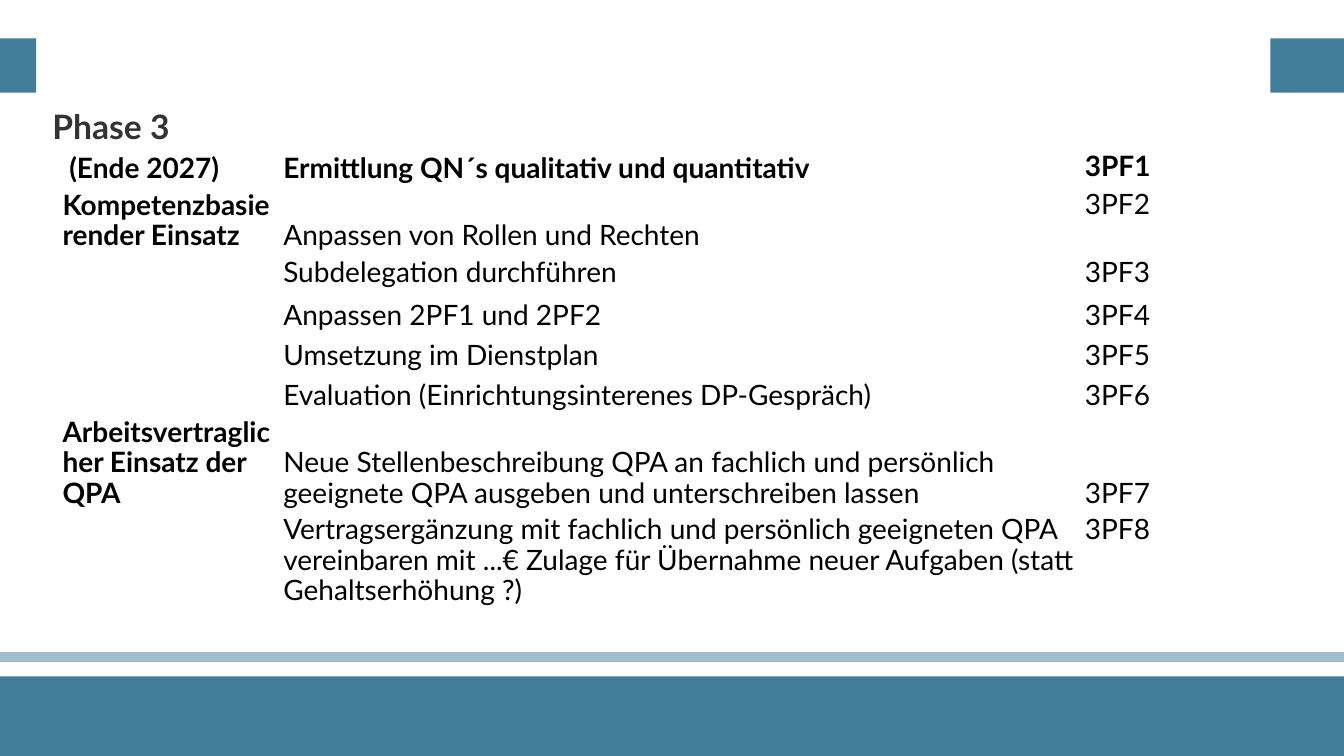
import pptx
import pptx.util
import pptx.dml.color
import pptx.enum.shapes
import pptx.enum.text
from lxml import etree

Inches = pptx.util.Inches
Pt = pptx.util.Pt
ANCHOR = pptx.enum.text.MSO_ANCHOR

COLORS = {"band": "417D99", "title": "333333", "text": "000000"}
FONT = "Lato"
WIDTH, HEIGHT = 13.33, 7.5
COLUMNS = [2.19, 7.95, 0.91]
# Row height, whether each cell is anchored at the bottom, and the three texts
ROWS = [
    (0.38, (1, 1, 0), (" (Ende 2027)", "Ermittlung QN´s qualitativ und quantitativ", "3PF1")),
    (0.67, (1, 1, 0), ("Kompetenzbasierender Einsatz", "Anpassen von Rollen und Rechten", "3PF2")),
    (0.39, (0, 0, 0), ("", "Subdelegation durchführen", "3PF3")),
    (0.39, (0, 1, 1), ("", "Anpassen 2PF1 und 2PF2", "3PF4")),
    (0.39, (0, 1, 1), ("", "Umsetzung im Dienstplan", "3PF5")),
    (0.39, (0, 1, 1), ("", "Evaluation (Einrichtungsinterenes DP-Gespräch)", "3PF6")),
    (0.97, (1, 1, 1), ("Arbeitsvertraglicher Einsatz der QPA",
                       "Neue Stellenbeschreibung QPA an fachlich und persönlich geeignete QPA "
                       "ausgeben und unterschreiben lassen", "3PF7")),
    (0.97, (0, 0, 0), ("", "Vertragsergänzung mit fachlich und persönlich geeigneten QPA "
                       "vereinbaren mit ...€ Zulage für Übernahme neuer Aufgaben "
                       "(statt Gehaltserhöhung ?)", "3PF8")),
    (0.32, (0, 0, 0), ("", "", "")),
]


def rgb(name):
    return pptx.dml.color.RGBColor.from_string(COLORS[name])


def style(para, size, color, bold):
    font = para.font
    font.name, font.size, font.bold = FONT, Pt(size), bold
    font.color.rgb = rgb(color)


def add_band(page, box, opacity=100):
    band = page.shapes.add_shape(pptx.enum.shapes.MSO_SHAPE.RECTANGLE, *map(Inches, box))
    band.shadow.inherit = False
    band.line.fill.background()
    band.fill.solid()
    band.fill.fore_color.rgb = rgb("band")
    if opacity < 100:
        tint = band.fill._xPr.find(".//" + pptx.oxml.ns.qn("a:srgbClr"))
        etree.SubElement(tint, pptx.oxml.ns.qn("a:alpha"), val=str(opacity * 1000))


def add_frame(page, box):
    """Place the bands at the foot and the blocks at both upper edges."""
    left, top, width, height = box
    add_band(page, (left, top + height - 0.79, width, 0.79))
    add_band(page, (left, top + height - 1.03, width, 0.1), opacity=50)
    for x, block_width in ((left, 0.36), (left + width - 0.73, 0.73)):
        add_band(page, (x, top + 0.38, block_width, 0.54))


def set_title(page, box, text):
    title = page.shapes.title
    title.left, title.top, title.width, title.height = map(Inches, box)
    frame = title.text_frame
    frame.margin_left = frame.margin_right = frame.margin_top = frame.margin_bottom = 0
    frame.vertical_anchor = ANCHOR.MIDDLE
    frame.text = text
    para = frame.paragraphs[0]
    para.alignment = pptx.enum.text.PP_ALIGN.LEFT
    style(para, 24, "title", True)


def fill_cell(cell, text, at_bottom, bold):
    cell.fill.background()
    cell.margin_left = cell.margin_right = cell.margin_top = cell.margin_bottom = Inches(0.03)
    cell.vertical_anchor = ANCHOR.BOTTOM if at_bottom else ANCHOR.TOP
    cell.text = text
    para = cell.text_frame.paragraphs[0]
    para.line_spacing = Pt(21.8)
    style(para, 20, "text", bold)


def add_task_table(page, box):
    table = page.shapes.add_table(len(ROWS), len(COLUMNS), *map(Inches, box)).table
    table.first_row = table.horz_banding = False
    for column, width in zip(table.columns, COLUMNS):
        column.width = Inches(width)
    for r, (height, anchors, texts) in enumerate(ROWS):
        table.rows[r].height = Inches(height)
        for c, (text, at_bottom) in enumerate(zip(texts, anchors)):
            fill_cell(table.cell(r, c), text, at_bottom, bold=r == 0 or c == 0)


def main():
    deck = pptx.Presentation()
    deck.slide_width, deck.slide_height = Inches(WIDTH), Inches(HEIGHT)
    page = deck.slides.add_slide(deck.slide_layouts.get_by_name("Title Only"))
    add_frame(page, (0, 0, WIDTH, HEIGHT))
    set_title(page, (0.52, 0.82, 12.28, 0.87), "Phase 3")
    add_task_table(page, (0.59, 1.48, sum(COLUMNS), sum(row[0] for row in ROWS)))
    deck.save("out.pptx")


if __name__ == "__main__":
    main()
